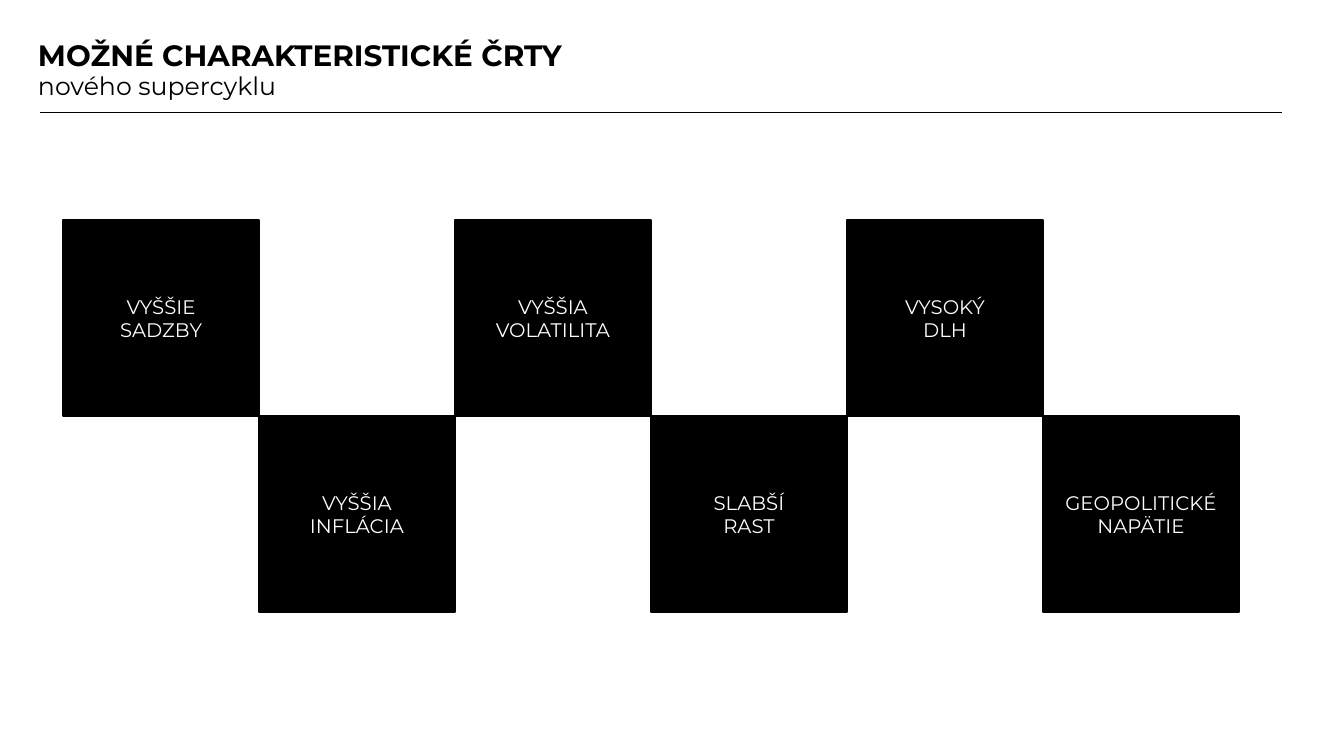
import dataclasses

import pptx
import pptx.dml.color
import pptx.enum.shapes
import pptx.enum.text
import pptx.oxml.ns
import pptx.util
from lxml import etree

PX = 914400 / 100.8
ANCHOR = pptx.enum.text.MSO_ANCHOR
ALIGN = pptx.enum.text.PP_ALIGN


def px(n):
    """Turn pixels into EMU."""
    return pptx.util.Emu(round(n * PX))


@dataclasses.dataclass(frozen=True)
class Theme:
    font: str = "Montserrat"
    ink: str = "000000"
    paper: str = "FFFFFF"
    title_size: int = 21
    subtitle_size: int = 18
    label_size: int = 14
    rule_width: float = 0.5
    border_width: float = 1


class Builder:
    def __init__(self, slide, theme):
        self.s = slide
        self.theme = theme

    def color(self, value):
        return pptx.dml.color.RGBColor.from_string(value)

    def style(self, p, size, color, bold=False):
        for r in p.runs:
            r.font.name = self.theme.font
            r.font.size = pptx.util.Pt(size)
            r.font.bold = bold
            r.font.color.rgb = self.color(color)

    def title(self, heading, subtitle, x, y, w, h):
        t = self.theme
        sp = self.s.shapes.title
        sp.left, sp.top, sp.width, sp.height = px(x), px(y), px(w), px(h)
        tf = sp.text_frame
        tf.text = f"{heading}\n{subtitle}"
        tf.word_wrap = True
        tf.auto_size = pptx.enum.text.MSO_AUTO_SIZE.NONE
        tf.vertical_anchor = ANCHOR.MIDDLE
        tf.margin_left = tf.margin_right = px(7)
        tf.margin_top = tf.margin_bottom = px(4)
        sizes = (t.title_size, t.subtitle_size)
        for p, size, bold in zip(tf.paragraphs, sizes, (True, False)):
            p.alignment = ALIGN.LEFT
            p.line_spacing = 0.9
            p.space_before = pptx.util.Pt(0)
            self.style(p, size, t.ink, bold)

    def rule(self, x1, x2, y):
        """Draw a thin horizontal line."""
        line = self.s.shapes.add_connector(
            pptx.enum.shapes.MSO_CONNECTOR.STRAIGHT, px(x1), px(y), px(x2), px(y))
        line.line.color.rgb = self.color(self.theme.ink)
        line.line.width = pptx.util.Pt(self.theme.rule_width)
        etree.SubElement(line._element.spPr, pptx.oxml.ns.qn("a:effectLst"))

    def square(self, text, x, y, side):
        t = self.theme
        sp = self.s.shapes.add_shape(
            pptx.enum.shapes.MSO_SHAPE.RECTANGLE, px(x), px(y), px(side), px(side))
        sp.shadow.inherit = False
        sp.fill.solid()
        sp.fill.fore_color.rgb = self.color(t.ink)
        sp.line.color.rgb = self.color(t.ink)
        sp.line.width = pptx.util.Pt(t.border_width)
        tf = sp.text_frame
        tf.text = text
        tf.word_wrap = True
        tf.vertical_anchor = ANCHOR.MIDDLE
        for p in tf.paragraphs:
            p.alignment = ALIGN.CENTER
            self.style(p, t.label_size, t.paper)


def main():
    prs = pptx.Presentation()
    prs.slide_width, prs.slide_height = px(1344), px(756)
    b = Builder(prs.slides.add_slide(prs.slide_layouts[5]), Theme())

    b.title("MOŽNÉ CHARAKTERISTICKÉ ČRTY", "nového supercyklu", 31, 37, 1242, 68)
    b.rule(40, 1282, 112)

    traits = ["VYŠŠIE\nSADZBY", "VYŠŠIA\nINFLÁCIA", "VYŠŠIA VOLATILITA",
              "SLABŠÍ\nRAST", "VYSOKÝ\nDLH", "GEOPOLITICKÉ\nNAPÄTIE"]
    left, top, side = 63, 220, 196
    for i, trait in enumerate(traits):
        b.square(trait, left + i * side, top + i % 2 * side, side)

    prs.save("out.pptx")


if __name__ == "__main__":
    main()
